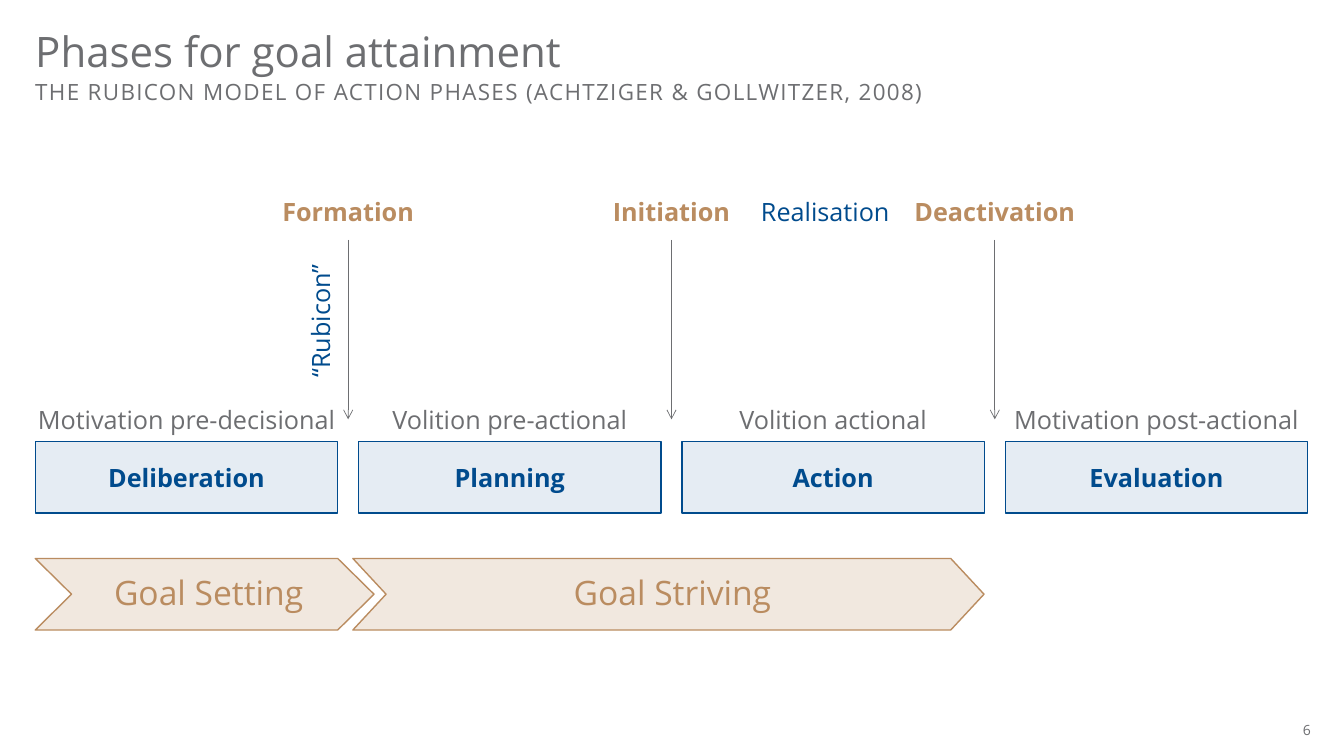
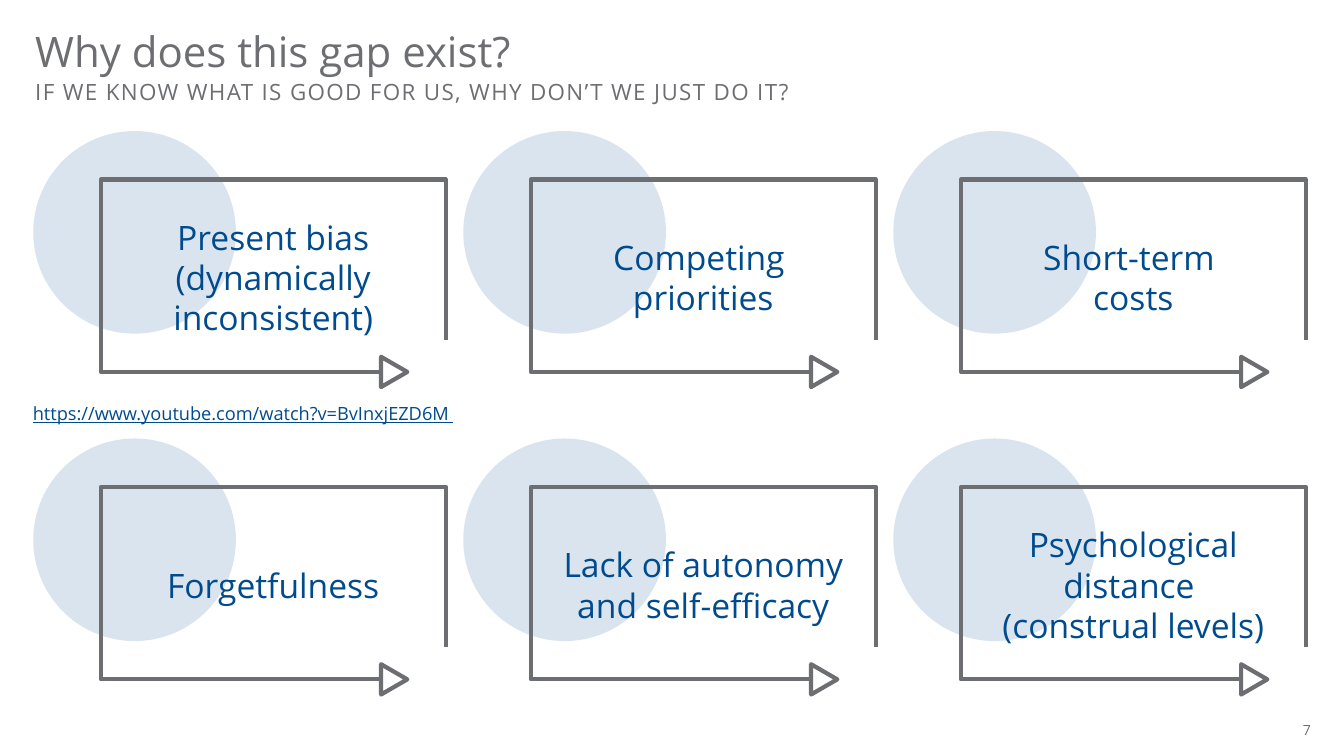
from itertools import product
from typing import NamedTuple, Optional

from lxml import etree
from pptx import Presentation
from pptx.dml.color import RGBColor
from pptx.enum import shapes, text
from pptx.oxml.ns import qn
from pptx.util import Inches, Pt

GREY = RGBColor(0x6D, 0x6E, 0x71)
BLUE = RGBColor(0x00, 0x4B, 0x8D)
BRONZE = RGBColor(0xBA, 0x8C, 0x60)
SAND = RGBColor(0xF1, 0xE8, 0xDF)
FONT = "Open Sans"
LEFT = 0.35

PHASE_W = 3
PHASE_GAP = 0.62 / 3
PHASE_PITCH = PHASE_W + PHASE_GAP
LABEL_H = 0.33
BAND_H = 0.71

CARD_X, CARD_Y = 0.33, 1.3
CARD_DX, CARD_DY = 4.265, 3.05


class Style(NamedTuple):
    size: float
    color: RGBColor
    bold: bool = False
    underline: bool = False
    align: text.PP_ALIGN = text.PP_ALIGN.CENTER
    anchor: text.MSO_ANCHOR = text.MSO_ANCHOR.MIDDLE
    insets: tuple[float, float, float, float] = (0.1, 0.05, 0.1, 0.05)
    line_spacing: Optional[float] = None
    tracking: float = 0


class Box(NamedTuple):
    x: float
    y: float
    w: float
    h: float


class Phase(NamedTuple):
    name: str
    kind: str


class Chevron(NamedTuple):
    name: str
    x: float
    w: float
    point: float


TITLE = Style(30, GREY, align=text.PP_ALIGN.LEFT, anchor=text.MSO_ANCHOR.TOP,
              insets=(0, 0, 0, 0), line_spacing=0.9)
SUBTITLE = TITLE._replace(size=16, tracking=1)
PAGE = Style(10, GREY, align=text.PP_ALIGN.RIGHT, anchor=text.MSO_ANCHOR.TOP,
             insets=(0, 0, 0, 0))
PHASE_NAME = Style(18, BLUE, bold=True)
PHASE_KIND = Style(18, GREY, insets=(0, 0.05, 0, 0.05))
STEP = Style(18, BRONZE, bold=True)
NOTE = Style(18, BLUE)
GOAL = Style(24, BRONZE, insets=(0.08, 0.04, 0, 0.04), line_spacing=0.9)
REASON = Style(24, BLUE)
LINK = Style(13, BLUE, underline=True)

PHASES = [
    Phase("Deliberation", "Motivation pre-decisional"),
    Phase("Planning", "Volition pre-actional"),
    Phase("Action", "Volition actional"),
    Phase("Evaluation", "Motivation post-actional"),
]
STEPS = ["Formation", "Initiation", "Deactivation"]
CHEVRONS = [
    Chevron("Goal Setting", LEFT, 3.36, 0.36),
    Chevron("Goal Striving", 3.5, 6.26, 0.33),
]
REASONS = [
    "Present bias (dynamically inconsistent)",
    "Competing \vpriorities",
    "Short-term \vcosts",
    "Forgetfulness",
    "Lack of autonomy and self-efficacy",
    "Psychological distance \v(construal levels)",
]


def emu(box: Box) -> list[int]:
    return [Inches(v) for v in box]


def write(sp, content: str, style: Style) -> None:
    tf = sp.text_frame
    tf.word_wrap = True
    tf.vertical_anchor = style.anchor
    (tf.margin_left, tf.margin_top,
     tf.margin_right, tf.margin_bottom) = [Inches(v) for v in style.insets]
    p = tf.paragraphs[0]
    p.text = content
    p.alignment = style.align
    if style.line_spacing:
        p.line_spacing = style.line_spacing
    f = p.font
    f.name, f.size, f.bold = FONT, Pt(style.size), style.bold
    f.color.rgb = style.color
    if style.underline:
        f.underline = True
    if style.tracking:
        for r in p.runs:
            r._r.get_or_add_rPr().set("spc", str(int(style.tracking * 100)))


def add_label(s, box: Box, content: str, style: Style, rotation: float = 0) -> None:
    sp = s.shapes.add_textbox(*emu(box))
    sp.rotation = rotation
    write(sp, content, style)


def add_block(s, kind: shapes.MSO_SHAPE, box: Box, fill: RGBColor,
              line: Optional[RGBColor] = None, opacity: int = 100):
    sp = s.shapes.add_shape(kind, *emu(box))
    sp.shadow.inherit = False
    sp.fill.solid()
    sp.fill.fore_color.rgb = fill
    if opacity < 100:
        color = sp._element.spPr.find(qn("a:solidFill"))[0]
        etree.SubElement(color, qn("a:alpha")).set("val", str(opacity * 1000))
    if line is None:
        sp.line.fill.background()
    else:
        sp.line.color.rgb = line
        sp.line.width = Pt(1)
    return sp


def add_outline(s, points: list[tuple[float, float]], close: bool) -> None:
    start, *rest = [(Inches(x), Inches(y)) for x, y in points]
    fb = s.shapes.build_freeform(*start)
    fb.add_line_segments(rest, close=close)
    sp = fb.convert_to_shape()
    sp.shadow.inherit = False
    sp.fill.background()
    sp.line.color.rgb = GREY
    sp.line.width = Pt(3)


def add_arrow(s, x: float, top: float, bottom: float) -> None:
    c = s.shapes.add_connector(shapes.MSO_CONNECTOR.STRAIGHT,
                               Inches(x), Inches(top), Inches(x), Inches(bottom))
    c.line.color.rgb = GREY
    c.line.width = Pt(0.5)
    etree.SubElement(c.line._get_or_add_ln(), qn("a:tailEnd")).set("type", "arrow")
    etree.SubElement(c._element.spPr, qn("a:effectLst"))


def add_card(s, x: float, y: float, reason: str) -> None:
    add_block(s, shapes.MSO_SHAPE.OVAL, Box(x, y, 2.01, 2.01), BLUE, opacity=15)
    left, top = x + 0.67, y + 0.48
    right, bottom = left + 3.42, top + 1.91
    add_outline(s, [(right, top + 1.59), (right, top), (left, top),
                    (left, bottom), (left + 2.77, bottom)], close=False)
    tip = left + 2.78
    add_outline(s, [(tip, bottom - 0.15), (tip + 0.26, bottom),
                    (tip, bottom + 0.15)], close=True)
    add_label(s, Box(left, top + 0.32, 3.42, 1.3), reason, REASON)


def add_slide(prs, number: int, title: str, subtitle: str):
    s = prs.slides.add_slide(prs.slide_layouts[6])
    add_label(s, Box(LEFT, 0.31, 10.63, 0.48), title, TITLE)
    add_label(s, Box(LEFT, 0.81, 10.63, 0.33), subtitle, SUBTITLE)
    add_label(s, Box(9.74, 7.16, 3.26, 0.17), str(number), PAGE)
    return s


def build_phases(prs) -> None:
    s = add_slide(prs, 6, "Phases for goal attainment",
                  "THE RUBICON MODEL OF ACTION PHASES (ACHTZIGER & GOLLWITZER, 2008)")
    for i, phase in enumerate(PHASES):
        x = LEFT + i * PHASE_PITCH
        sp = add_block(s, shapes.MSO_SHAPE.RECTANGLE, Box(x, 4.38, PHASE_W, BAND_H),
                       BLUE, BLUE, opacity=10)
        write(sp, phase.name, PHASE_NAME)
        add_label(s, Box(x, 4, PHASE_W, LABEL_H), phase.kind, PHASE_KIND)
    for i, step in enumerate(STEPS, start=1):
        x = LEFT + i * PHASE_PITCH - PHASE_GAP / 2
        add_arrow(s, x, 2.38, 4.16)
        add_label(s, Box(x - PHASE_W / 2, 1.93, PHASE_W, LABEL_H), step, STEP)
    add_label(s, Box(2.49, 3.02, 1.37, LABEL_H), "“Rubicon”", NOTE, rotation=270)
    add_label(s, Box(7.43, 1.93, 1.51, LABEL_H), "Realisation", NOTE)
    for chevron in CHEVRONS:
        sp = add_block(s, shapes.MSO_SHAPE.CHEVRON,
                       Box(chevron.x, 5.54, chevron.w, BAND_H), SAND, BRONZE)
        sp.adjustments[0] = chevron.point / BAND_H
        write(sp, chevron.name, GOAL)


def build_reasons(prs) -> None:
    s = add_slide(prs, 7, "Why does this gap exist?",
                  "IF WE KNOW WHAT IS GOOD FOR US, WHY DON’T WE JUST DO IT?")
    for (row, col), reason in zip(product(range(2), range(3)), REASONS):
        add_card(s, CARD_X + col * CARD_DX, CARD_Y + row * CARD_DY, reason)
    add_label(s, Box(0.2, 3.94, 4.42, 0.32),
              "https://www.youtube.com/watch?v=BvInxjEZD6M ", LINK)


def main() -> None:
    prs = Presentation()
    prs.slide_width, prs.slide_height = Inches(13.33), Inches(7.5)
    build_phases(prs)
    build_reasons(prs)
    prs.save("out.pptx")


if __name__ == "__main__":
    main()
